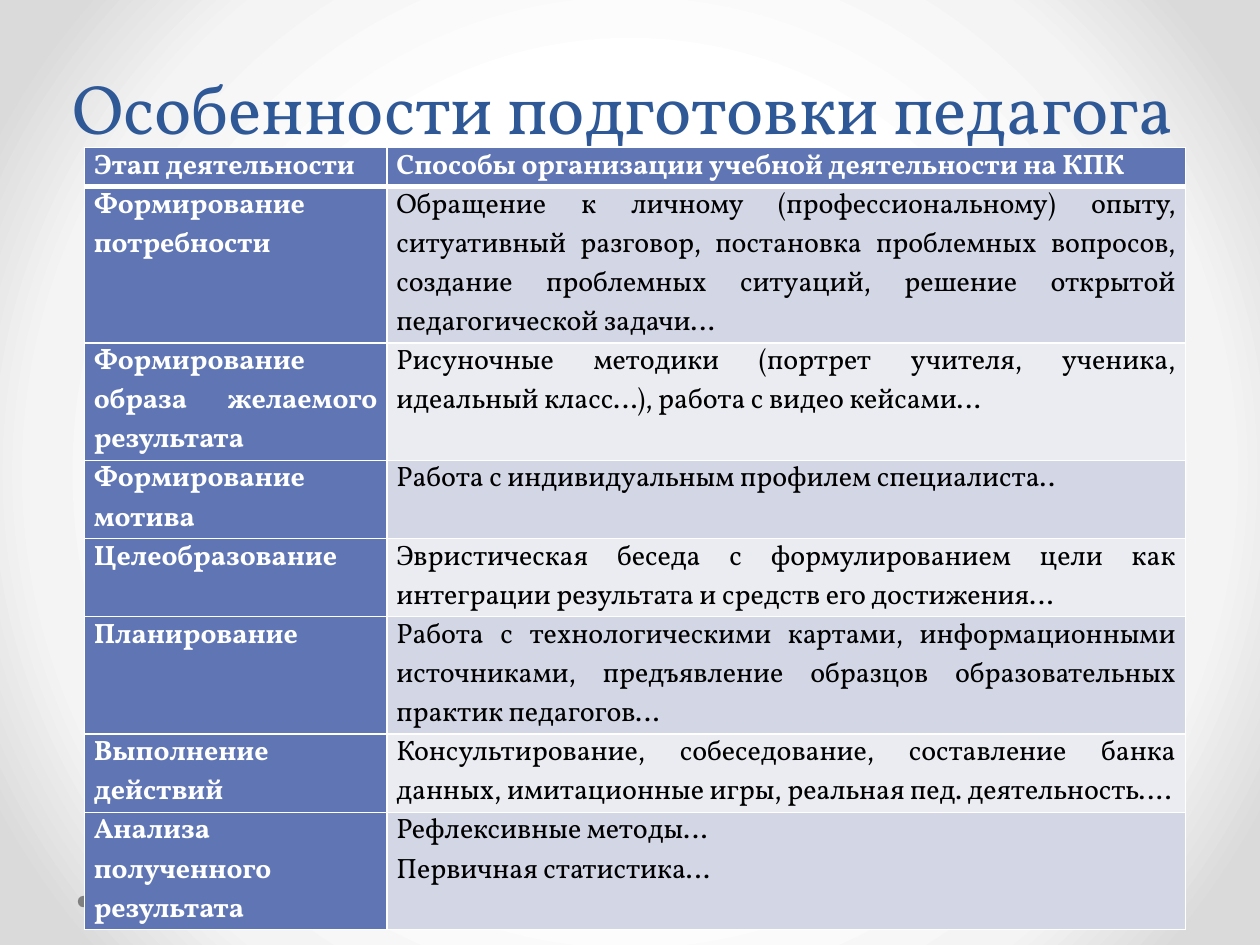
from pptx import Presentation
from pptx import util as u
from pptx.dml.color import RGBColor
from pptx.enum import shapes, text
from pptx.oxml import parse_xml
from pptx.oxml.ns import nsdecls

FONT = "Vollkorn"
BLUE, WHITE, BLACK = "6076B4", "FFFFFF", "000000"
BANDS = ["EAECF2", "D2D6E5"]


def paint(fill, tone):
    fill.solid()
    fill.fore_color.rgb = RGBColor.from_string(tone)


def write(par, words, size, tone, bold=False):
    run = par.add_run()
    run.text = words
    run.font.name = FONT
    run.font.size = u.Pt(size)
    run.font.bold = bold
    run.font.color.rgb = RGBColor.from_string(tone)


deck = Presentation()
deck.slide_width, deck.slide_height = u.Cm(25.4), u.Cm(19.05)
slide = deck.slides.add_slide(deck.slide_layouts[5])

# Round gradient background
stops = "".join(
    f'<a:gs pos="{pos}000"><a:srgbClr val="{tone}"/></a:gs>'
    for pos, tone in [(50, WHITE), (76, "F4F4F4"), (92, "DADADA")])
slide._element.cSld.insert(0, parse_xml(
    f'<p:bg {nsdecls("p", "a")}><p:bgPr><a:gradFill rotWithShape="1">'
    f'<a:gsLst>{stops}</a:gsLst><a:path path="circle">'
    '<a:fillToRect l="50000" t="50000" r="50000" b="50000"/></a:path>'
    '</a:gradFill><a:effectLst/></p:bgPr></p:bg>'))

# Title
title = slide.shapes.title
title.left, title.top = u.Cm(0.9), u.Cm(0)
title.width, title.height = u.Cm(23.6), u.Cm(3.12)
frame = title.text_frame
frame.auto_size = text.MSO_AUTO_SIZE.NONE
frame.vertical_anchor = text.MSO_ANCHOR.BOTTOM
par = frame.paragraphs[0]
par.alignment = text.PP_ALIGN.CENTER
par.line_spacing = u.Pt(58)
write(par, "Особенности подготовки педагога ", 40, "2F5897")

# Footer dot
dot = slide.shapes.add_shape(shapes.MSO_SHAPE.OVAL, u.Cm(1.57), u.Cm(18.06),
                             u.Cm(0.23), u.Cm(0.23))
dot.shadow.inherit = False
paint(dot.fill, "808080")
dot.line.fill.background()

# Table: row height in cm, stage, ways of working
rows = [
    (0.79, "Этап деятельности",
     ["Способы организации учебной деятельности на КПК"]),
    (3.1, "Формирование потребности",
     ["Обращение к личному (профессиональному) опыту, ситуативный разговор, "
      "постановка проблемных вопросов, создание проблемных ситуаций, "
      "решение открытой педагогической задачи…"]),
    (2.11, "Формирование образа желаемого результата",
     ["Рисуночные методики (портрет учителя, ученика, идеальный класс…), "
      "работа с видео кейсами…"]),
    (1.4, "Формирование мотива",
     ["Работа с индивидуальным профилем специалиста.."]),
    (1.55, "Целеобразование",
     ["Эвристическая беседа с формулированием цели как интеграции "
      "результата и средств его достижения…"]),
    (2.34, "Планирование",
     ["Работа с технологическими картами, информационными источниками, "
      "предъявление образцов образовательных практик педагогов…"]),
    (1.55, "Выполнение действий",
     ["Консультирование, собеседование, составление банка данных, "
      "имитационные игры, реальная пед. деятельность…."]),
    (2.11, "Анализа полученного результата",
     ["Рефлексивные методы…", "Первичная статистика…"]),
]
table = slide.shapes.add_table(
    len(rows), 2, u.Cm(1.7), u.Cm(2.97), u.Cm(22.2),
    u.Cm(sum(row[0] for row in rows))).table
for col, width in zip(table.columns, (6.1, 16.1)):
    col.width = u.Cm(width)

for r, (height, stage, ways) in enumerate(rows):
    table.rows[r].height = u.Cm(height)
    for c, lines in enumerate(([stage], ways)):
        cell = table.cell(r, c)
        head = r == 0 or c == 0
        cell.margin_left = cell.margin_right = u.Cm(0.19)
        cell.margin_top = cell.margin_bottom = 0
        paint(cell.fill, BLUE if head else BANDS[r % 2])
        for n, line in enumerate(lines):
            frame = cell.text_frame
            par = frame.add_paragraph() if n else frame.paragraphs[0]
            par.alignment = text.PP_ALIGN.JUSTIFY
            write(par, line, 16, WHITE if head else BLACK, head)

        # White borders, thick between the header and the body
        for n, side in enumerate("LRTB"):
            thick = (r, side) in [(0, "B"), (1, "T")]
            cell._tc.tcPr.insert(n, parse_xml(
                f'<a:ln{side} {nsdecls("a")} w="{u.Pt(3 if thick else 1)}">'
                f'<a:solidFill><a:srgbClr val="{WHITE}"/></a:solidFill>'
                f'</a:ln{side}>'))

deck.save("out.pptx")
